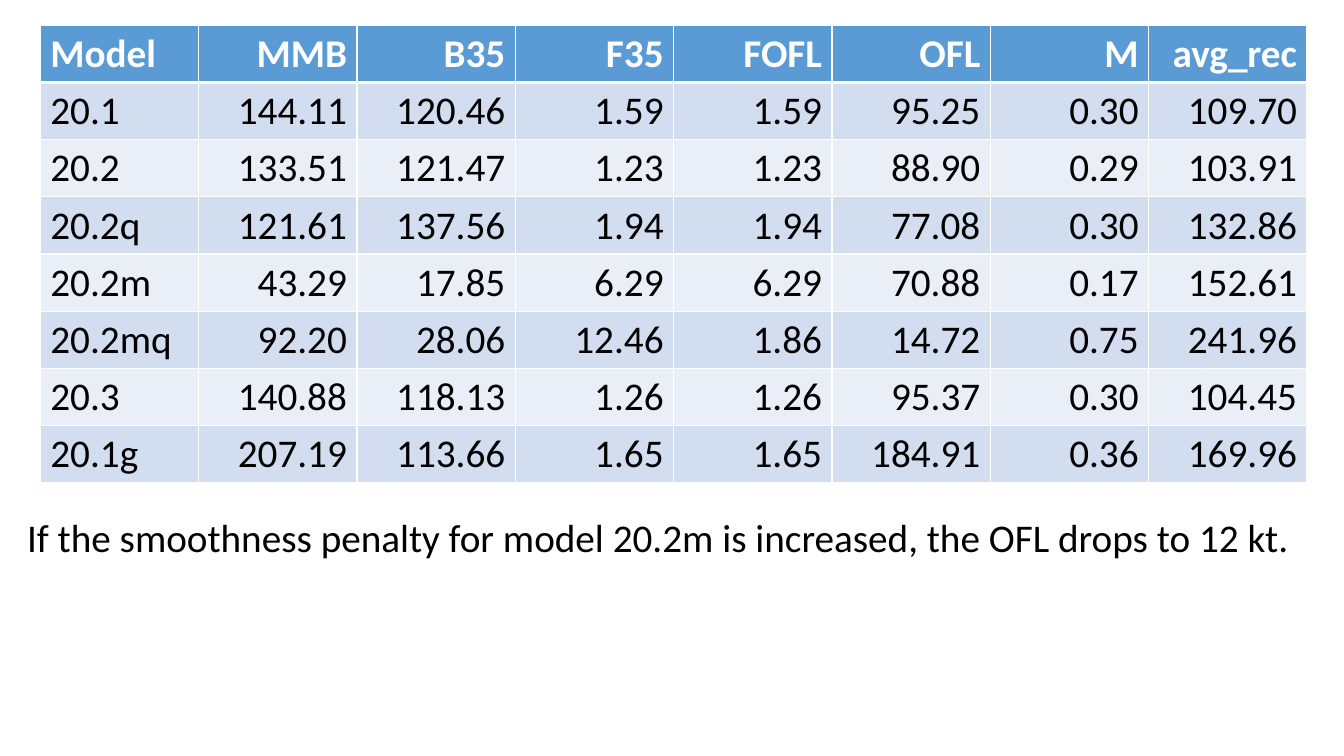
from lxml.etree import SubElement
from pptx import Presentation
from pptx.dml.color import RGBColor
from pptx.enum.text import PP_ALIGN
from pptx.oxml.ns import qn
from pptx.util import Pt

COLORS = {
    "head": "5B9BD5",
    "odd": "D2DEEF",
    "even": "EAEFF7",
    "rule": "FFFFFF",
    "light": "FFFFFF",
    "dark": "000000",
}
FACE = "Calibri"
SIZE = 28

MODELS = [
    ["Model", "MMB", "B35", "F35", "FOFL", "OFL", "M", "avg_rec"],
    ["20.1", "144.11", "120.46", "1.59", "1.59", "95.25", "0.30", "109.70"],
    ["20.2", "133.51", "121.47", "1.23", "1.23", "88.90", "0.29", "103.91"],
    ["20.2q", "121.61", "137.56", "1.94", "1.94", "77.08", "0.30", "132.86"],
    ["20.2m", "43.29", "17.85", "6.29", "6.29", "70.88", "0.17", "152.61"],
    ["20.2mq", "92.20", "28.06", "12.46", "1.86", "14.72", "0.75", "241.96"],
    ["20.3", "140.88", "118.13", "1.26", "1.26", "95.37", "0.30", "104.45"],
    ["20.1g", "207.19", "113.66", "1.65", "1.65", "184.91", "0.36", "169.96"],
]
NOTE = ("If the smoothness penalty for model 20.2m is increased, "
        "the OFL drops to 12 kt.")


def color(name):
    return RGBColor.from_string(COLORS[name])


def style(para, name, bold=False):
    para.font.name = FACE
    para.font.size = Pt(SIZE)
    para.font.bold = bold
    para.font.color.rgb = color(name)


def border(cell, sides):
    """Rule the cell; sides maps L, R, T, B to widths in points."""
    props = cell._tc.get_or_add_tcPr()
    for side, width in sides.items():
        line = SubElement(props, qn(f"a:ln{side}"), w=str(Pt(width)))
        fill = SubElement(line, qn("a:solidFill"))
        SubElement(fill, qn("a:srgbClr"), val=COLORS["rule"])


def add_grid(slide, left, top, width, height):
    box = [Pt(n) for n in (left, top, width, height)]
    table = slide.shapes.add_table(len(MODELS), len(MODELS[0]), *box).table
    for r, row in enumerate(MODELS):
        head = r == 0
        band = "head" if head else "odd" if r % 2 else "even"
        sides = {"L": 1, "R": 1, "T": 3 if r == 1 else 1, "B": 3 if head else 1}
        for c, value in enumerate(row):
            cell = table.cell(r, c)
            cell.text = value
            border(cell, sides)
            cell.fill.solid()
            cell.fill.fore_color.rgb = color(band)
            para = cell.text_frame.paragraphs[0]
            para.alignment = PP_ALIGN.RIGHT if c else PP_ALIGN.LEFT
            style(para, "light" if head else "dark", head)


def add_note(slide, left, top, width, height):
    box = [Pt(n) for n in (left, top, width, height)]
    frame = slide.shapes.add_textbox(*box).text_frame
    frame.word_wrap = True
    para = frame.paragraphs[0]
    para.text = NOTE
    para.line_spacing = 0.9
    style(para, "dark")


def main():
    deck = Presentation()
    deck.slide_width, deck.slide_height = Pt(960), Pt(540)
    slide = deck.slides.add_slide(deck.slide_layouts[6])
    # Remark below the table
    add_note(slide, 12.25, 367.2, 959, 118.8)
    # Model results
    add_grid(slide, 28.8, 18, 905, 326)
    deck.save("out.pptx")


if __name__ == "__main__":
    main()
